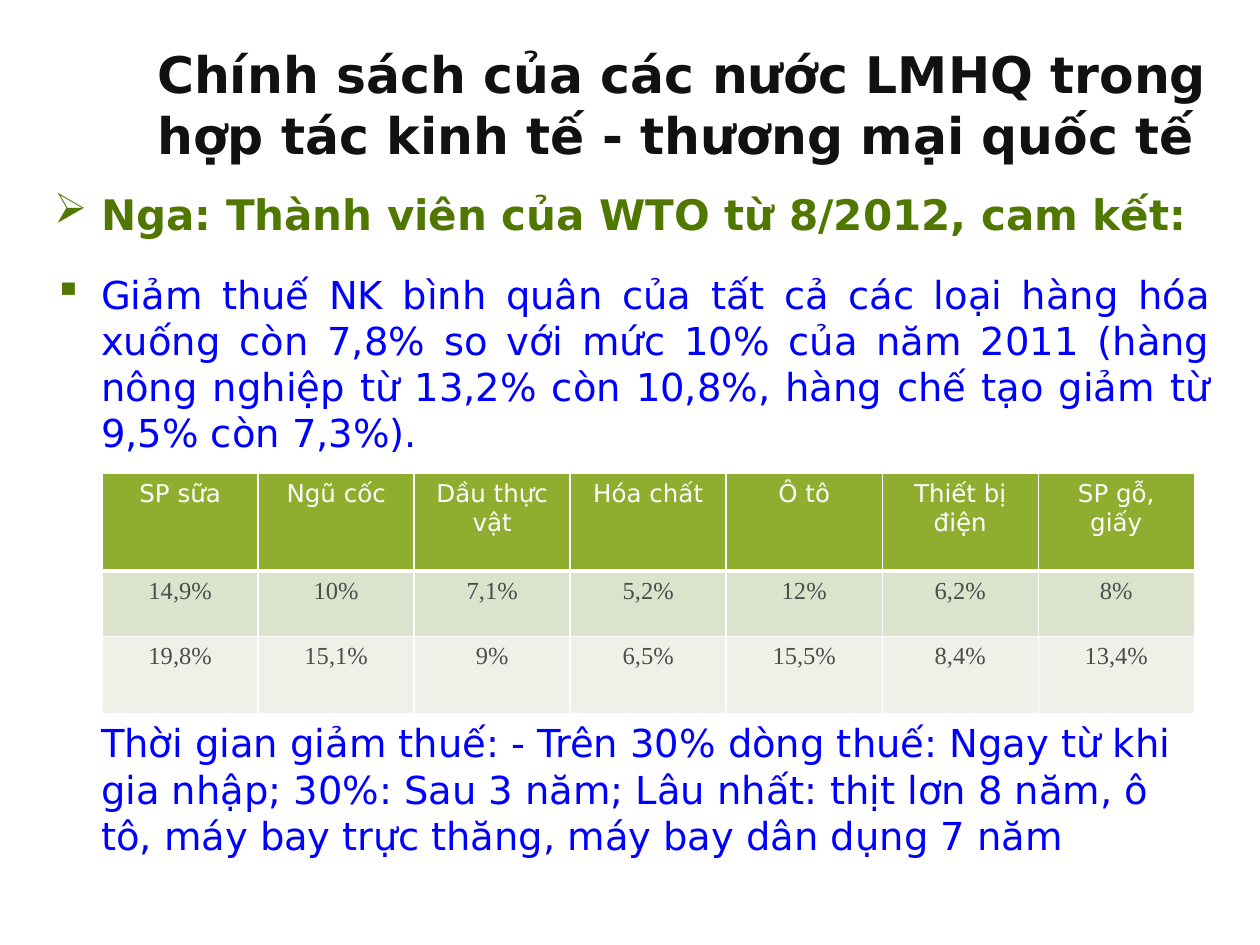
from lxml import etree
from pptx import Presentation
from pptx.dml.color import RGBColor
from pptx.enum.text import MSO_ANCHOR, PP_ALIGN
from pptx.oxml.ns import qn
from pptx.util import Cm, Pt

MIDDLE, TOP = MSO_ANCHOR.MIDDLE, MSO_ANCHOR.TOP
LEFT, CENTER, JUSTIFY = PP_ALIGN.LEFT, PP_ALIGN.CENTER, PP_ALIGN.JUSTIFY
SANS, SERIF = "DejaVu Sans", "Times New Roman"
WHITE, BLACK, GREEN, BLUE, GRAY = "FFFFFF", "111111", "507800", "0000FF", "4D4D4D"
INDENT = Cm(0.95)

TITLE = "Chính sách của các nước LMHQ trong hợp tác kinh tế - thương mại quốc tế"
COMMITMENT = "Nga: Thành viên của WTO từ 8/2012, cam kết:"
TARIFF_CUT = (
    "Giảm thuế NK bình quân của tất cả các loại hàng hóa xuống còn 7,8% "
    "so với mức 10% của năm 2011 (hàng nông nghiệp từ 13,2% còn 10,8%, "
    "hàng chế tạo giảm từ 9,5% còn 7,3%)."
)
SCHEDULE = (
    "Thời gian giảm thuế: - Trên 30% dòng thuế: Ngay từ khi gia nhập; "
    "30%: Sau 3 năm; Lâu nhất: thịt lơn 8 năm, ô tô, máy bay trực thăng, "
    "máy bay dân dụng 7 năm"
)
TARIFFS = [
    ["SP sữa", "Ngũ cốc", "Dầu thực vật", "Hóa chất", "Ô tô", "Thiết bị điện", "SP gỗ, giấy"],
    ["14,9%", "10%", "7,1%", "5,2%", "12%", "6,2%", "8%"],
    ["19,8%", "15,1%", "9%", "6,5%", "15,5%", "8,4%", "13,4%"],
]
# Height (cm), fill, font, text colour and bottom border (pt) of each table row
ROW_STYLES = [
    (1.96, "8FAD2F", SANS, WHITE, 3),
    (1.32, "DBE3CD", SERIF, GRAY, 1),
    (1.55, "EEF1E8", SERIF, GRAY, 1),
]


def color(value):
    return RGBColor.from_string(value)


def add_frame(page, left, top, width, height, anchor=TOP):
    box = page.shapes.add_textbox(left, top, width, height)
    frame = box.text_frame
    frame.word_wrap = True
    frame.vertical_anchor = anchor
    return frame


def write(para, text, size, hue, font=SANS, bold=False, align=LEFT):
    para.text = text
    para.alignment = align
    para.font.name = font
    para.font.size = Pt(size)
    para.font.bold = bold
    para.font.color.rgb = color(hue)


def add_bullet(para, symbol):
    props = para._p.get_or_add_pPr()
    props.set("marL", str(INDENT))
    props.set("indent", str(-INDENT))
    tint = etree.SubElement(props, qn("a:buClr"))
    etree.SubElement(tint, qn("a:srgbClr"), val=GREEN)
    etree.SubElement(props, qn("a:buChar"), char=symbol)


def set_borders(cell, bottom):
    props = cell._tc.get_or_add_tcPr()
    sides = [("lnL", 1), ("lnR", 1), ("lnT", 1), ("lnB", bottom)]
    for place, (side, points) in enumerate(sides):
        line = etree.Element(qn("a:" + side), w=str(Pt(points)))
        fill = etree.SubElement(line, qn("a:solidFill"))
        etree.SubElement(fill, qn("a:srgbClr"), val=WHITE)
        props.insert(place, line)


def add_title(page, left, top, width, height):
    frame = add_frame(page, left, top, width, height, MIDDLE)
    write(frame.paragraphs[0], TITLE, 28.8, BLACK, bold=True)


def add_commitments(page, left, top, width, height):
    frame = add_frame(page, left, top, width, height)
    heading = frame.paragraphs[0]
    add_bullet(heading, "➢")
    write(heading, COMMITMENT, 24, GREEN, bold=True, align=JUSTIFY)
    heading.space_after = Pt(12)
    detail = frame.add_paragraph()
    add_bullet(detail, "▪")
    write(detail, TARIFF_CUT, 22, BLUE, align=JUSTIFY)
    detail.space_before = Pt(6)


def add_tariff_table(page, left, top, width):
    height = Cm(sum(style[0] for style in ROW_STYLES))
    columns = len(TARIFFS[0])
    table = page.shapes.add_table(len(TARIFFS), columns, left, top, width, height).table
    for column in table.columns:
        column.width = width // columns
    for row, texts, style in zip(table.rows, TARIFFS, ROW_STYLES):
        row_height, fill, font, hue, bottom = style
        row.height = Cm(row_height)
        for cell, text in zip(row.cells, texts):
            cell.fill.solid()
            cell.fill.fore_color.rgb = color(fill)
            set_borders(cell, bottom)
            write(cell.text_frame.paragraphs[0], text, 14, hue, font, align=CENTER)


def add_schedule(page, left, top, width, height):
    frame = add_frame(page, left, top, width, height)
    write(frame.paragraphs[0], SCHEDULE, 22, BLUE)


def main():
    deck = Presentation()
    deck.slide_width, deck.slide_height = Cm(25.4), Cm(19.05)
    page = deck.slides.add_slide(deck.slide_layouts[6])
    body_left, body_width = Cm(0.84), Cm(23.8)

    add_title(page, Cm(2.92), Cm(1.24), Cm(22.33), Cm(1.7))
    add_commitments(page, body_left, Cm(3.68), body_width, Cm(5.7))
    add_tariff_table(page, Cm(2.06), Cm(9.55), Cm(22.02))
    # The closing text lines up with the indented text above
    add_schedule(page, body_left + INDENT, Cm(14.38), body_width - INDENT, Cm(3.2))
    deck.save("out.pptx")


if __name__ == "__main__":
    main()
